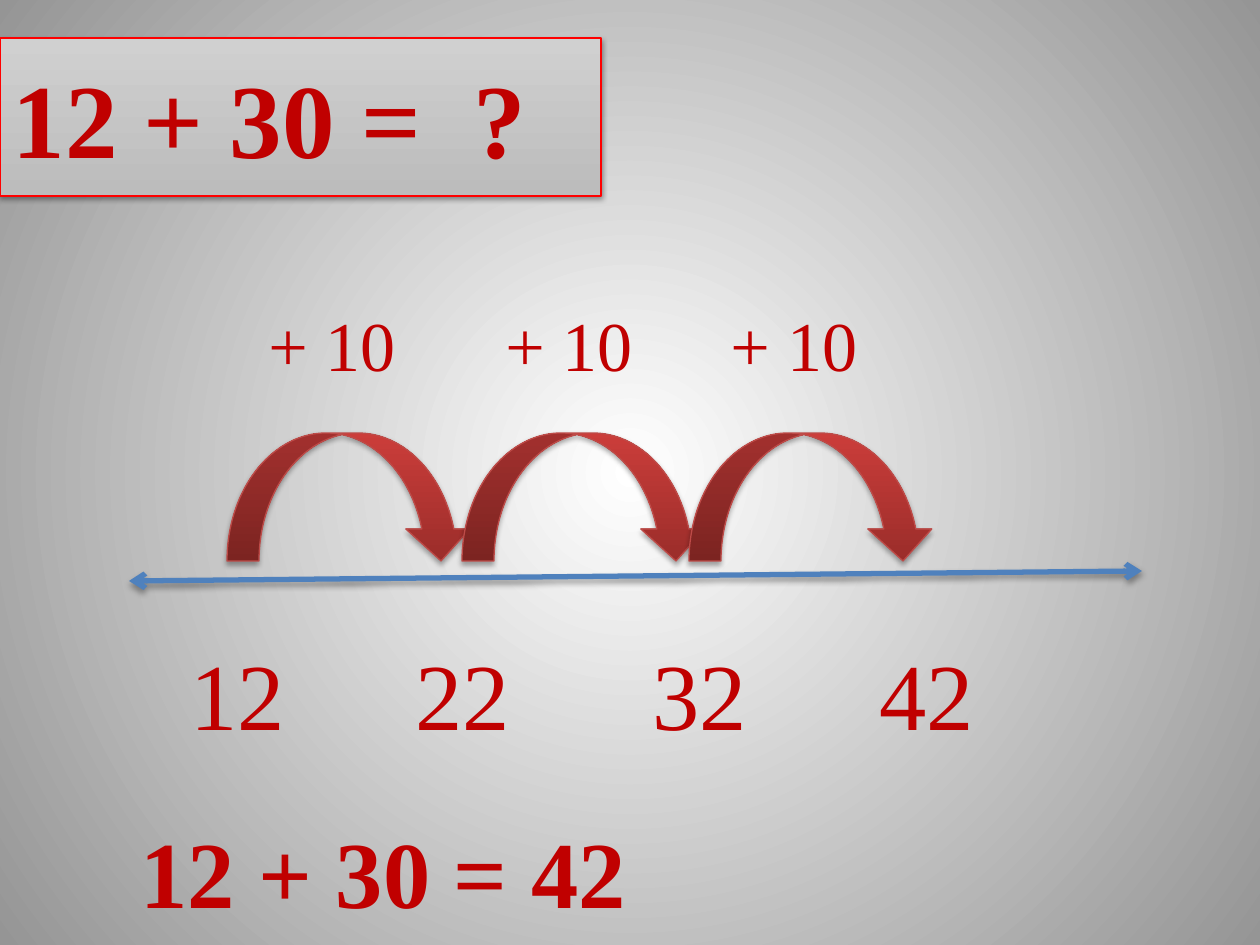
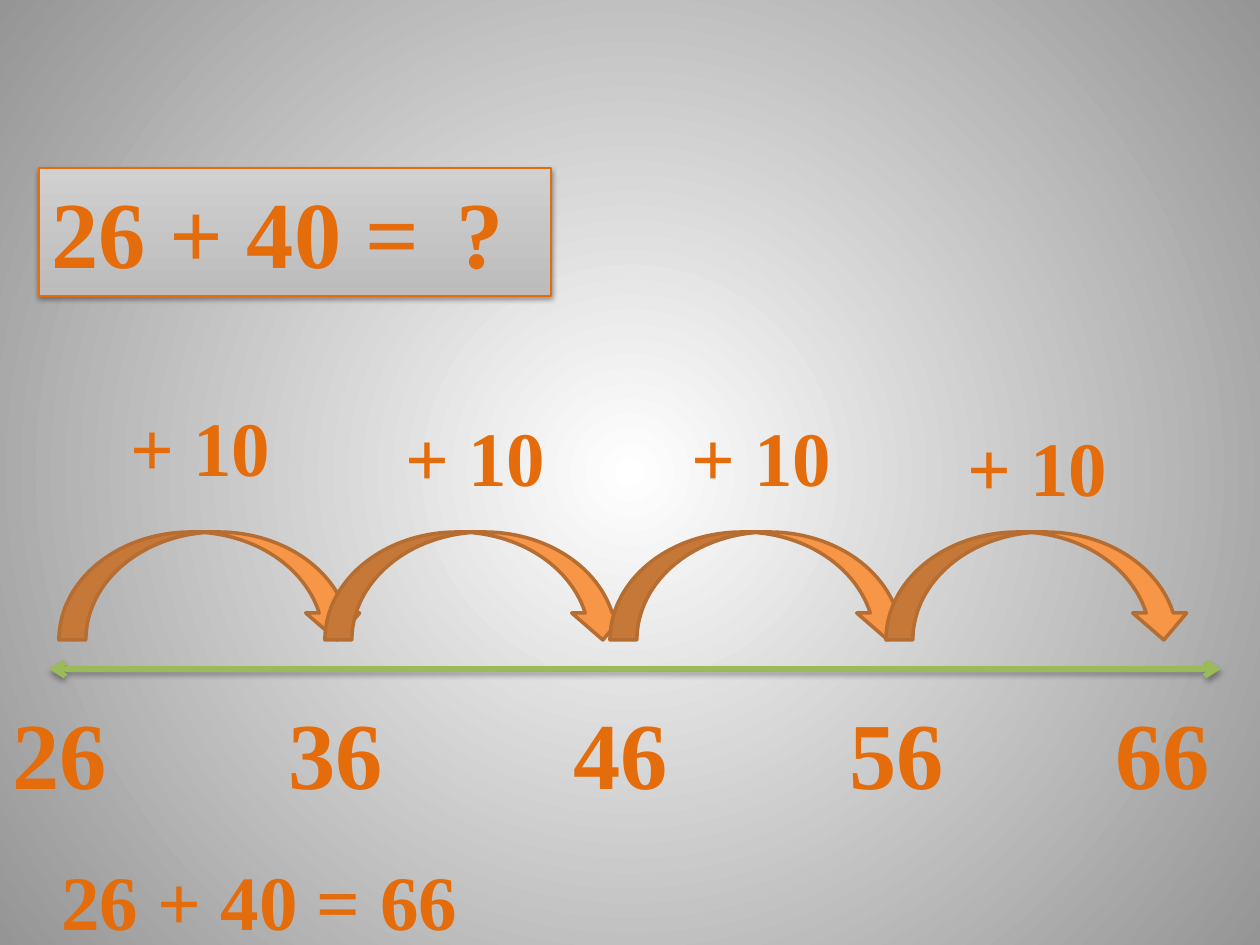
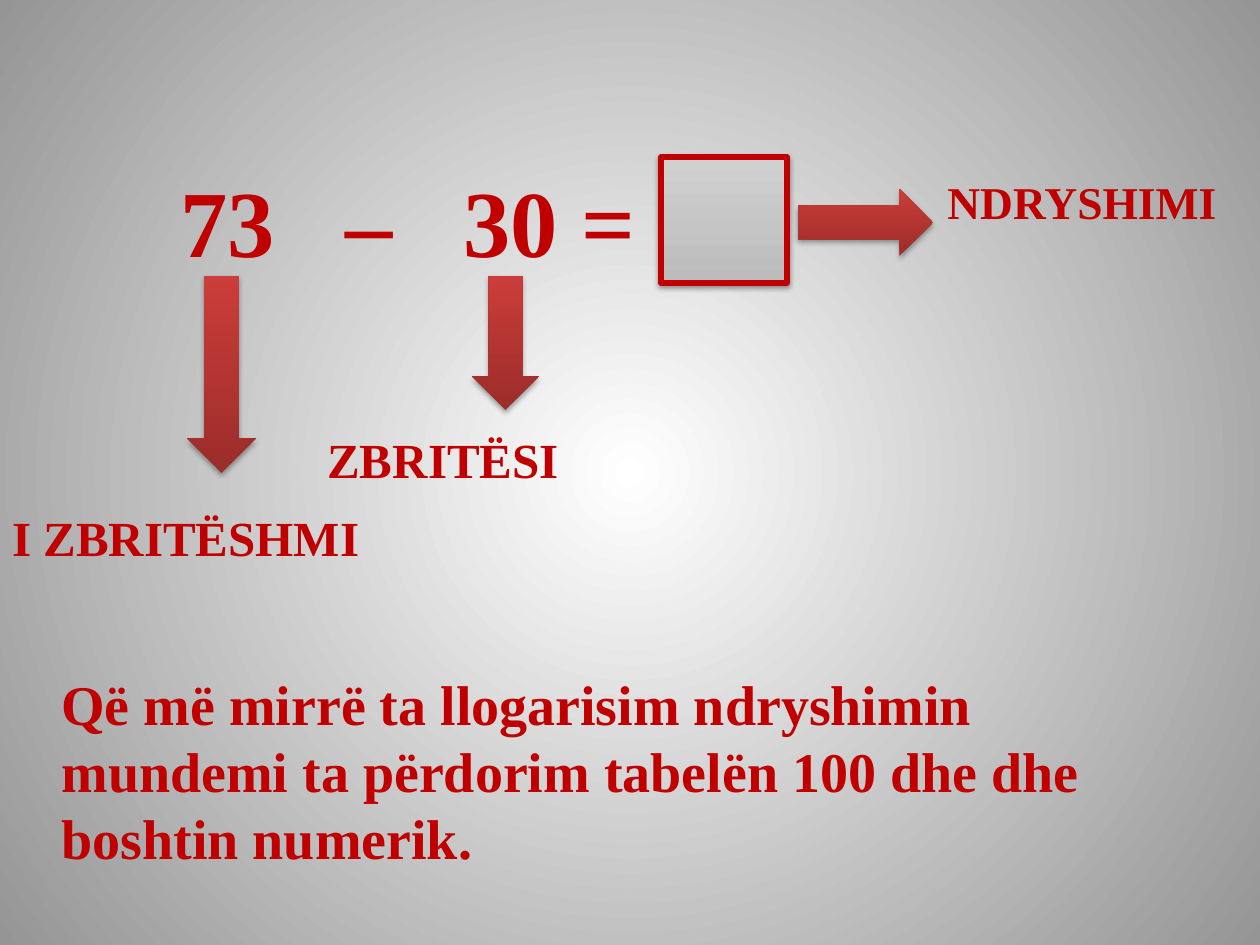
"""Build three slides that teach adding and subtracting tens."""
from lxml import etree
from pptx import Presentation
from pptx.dml.color import RGBColor
from pptx.enum.shapes import MSO_CONNECTOR, MSO_SHAPE
from pptx.enum.text import MSO_ANCHOR, MSO_AUTO_SIZE, PP_ALIGN
from pptx.oxml.ns import qn
from pptx.util import Inches, Pt

PX = 7257
FONT = "Times New Roman"
COLORS = {
    "red": "C00000", "orange": "E46C0A", "frame": "FF0000",
    "hop_line": "BE4B48", "hop_orange": "F79646", "hop_orange_line": "B66D31",
    "blue": "4F81BD", "green": "9BBB59", "shadow": "000000",
    "center": "FFFFFF", "edge": "959595",
    "panel_low": "BCBCBC", "panel_high": "D0D0D0",
    "arrow_low": "9B2D2A", "arrow_high": "CB3D3A",
}
PANEL = ("panel_low", "panel_high")
RED_ARROW = ("arrow_low", "arrow_high")
PANEL_SHADOW = (20000, 38000)
ARROW_SHADOW = (23000, 35000)
RECTANGLE = MSO_SHAPE.RECTANGLE
HOP = MSO_SHAPE.CURVED_DOWN_ARROW
DOWN_ARROW = MSO_SHAPE.DOWN_ARROW
RIGHT_ARROW = MSO_SHAPE.RIGHT_ARROW
STRAIGHT = MSO_CONNECTOR.STRAIGHT
TOP = MSO_ANCHOR.TOP
NO_FIT = MSO_AUTO_SIZE.NONE
GROW = MSO_AUTO_SIZE.SHAPE_TO_FIT_TEXT
JUSTIFY = PP_ALIGN.JUSTIFY


def write(shape, text, size, color, bold=True, wrap=True, tabs=()):
    """Put one styled paragraph into a shape."""
    frame = shape.text_frame
    frame.word_wrap = wrap
    frame.text = text
    paragraph = frame.paragraphs[0]
    if tabs:
        tab_list = etree.SubElement(paragraph._p.get_or_add_pPr(), qn("a:tabLst"))
        for position in tabs:
            etree.SubElement(tab_list, qn("a:tab"), pos=str(position * PX), algn="l")
    for run in paragraph.runs:
        run.font.name = FONT
        run.font.size = Pt(size)
        run.font.bold = bold
        run.font.color.rgb = RGBColor.from_string(COLORS[color])
    return frame


def finish(shape, fill=None, line=None, width=0.75, shadow=None):
    """Set the fill, line and shadow of a shape or connector."""
    if isinstance(fill, tuple):
        shape.fill.gradient()
        shape.fill.gradient_angle = 90
        for stop, name in zip(shape.fill.gradient_stops, fill):
            stop.color.rgb = RGBColor.from_string(COLORS[name])
    elif fill:
        shape.fill.solid()
        shape.fill.fore_color.rgb = RGBColor.from_string(COLORS[fill])
    if line:
        shape.line.color.rgb = RGBColor.from_string(COLORS[line])
        shape.line.width = Pt(width)
    else:
        shape.line.fill.background()
    effects = etree.SubElement(shape.element.spPr, qn("a:effectLst"))
    if shadow:
        distance, alpha = shadow
        outer = etree.SubElement(effects, qn("a:outerShdw"), blurRad="40000",
                                 dist=str(distance), dir="5400000", rotWithShape="0")
        shade = etree.SubElement(outer, qn("a:srgbClr"), val=COLORS["shadow"])
        etree.SubElement(shade, qn("a:alpha"), val=str(alpha))


presentation = Presentation()
presentation.slide_width = Inches(10)
presentation.slide_height = Inches(7.5)

master = presentation.slide_master
background = master.background.fill
background.gradient()
for stop, name in zip(background.gradient_stops, ("center", "edge")):
    stop.color.rgb = RGBColor.from_string(COLORS[name])
gradient = master.element.find(".//" + qn("a:gradFill"))
gradient.remove(gradient.find(qn("a:lin")))
circle = etree.SubElement(gradient, qn("a:path"), path="circle")
etree.SubElement(circle, qn("a:fillToRect"), l="50000", t="50000", r="50000", b="50000")

title_only = presentation.slide_layouts[5]
blank = presentation.slide_layouts[6]
red_slide = presentation.slides.add_slide(title_only)
orange_slide = presentation.slides.add_slide(blank)
terms_slide = presentation.slides.add_slide(blank)

title = red_slide.shapes.title
title.left, title.top, title.width, title.height = 0, 38 * PX, 601 * PX, 158 * PX
frame = write(title, "12 + 30 =\t?", 60, "red", tabs=(461,))
frame.auto_size = NO_FIT
frame.paragraphs[0].alignment = JUSTIFY
finish(title, PANEL, "frame", shadow=PANEL_SHADOW)

question = orange_slide.shapes.add_shape(RECTANGLE, 39 * PX, 168 * PX, 512 * PX, 128 * PX)
frame = write(question, "26 + 40 =", 54, "orange")
frame.vertical_anchor = TOP
frame.paragraphs[0].alignment = JUSTIFY
finish(question, PANEL, "orange", shadow=PANEL_SHADOW)
unknown = orange_slide.shapes.add_textbox(444 * PX, 168 * PX, 69 * PX, 127 * PX)
write(unknown, "?", 54, "orange")

number_lines = [
    {"slide": red_slide, "color": "red", "bold": False,
     "axis": (129, 581, 1142, 571), "axis_color": "blue",
     "start": 12, "number_lefts": (178, 403, 640, 867), "number_top": 630,
     "hop_lefts": (227, 462, 689), "hop_top": 433, "hop_size": (246, 128),
     "hop_style": (RED_ARROW, "hop_line", 0.75, ARROW_SHADOW),
     "labels": ((256, 295), (493, 295), (718, 295)), "label_size": (154, 97, 40),
     "answer": "12 + 30 = 42", "answer_box": (128, 808, 515, 127), "answer_size": 54},
    {"slide": orange_slide, "color": "orange", "bold": True,
     "axis": (49, 669, 1221, 669), "axis_color": "green",
     "start": 26, "number_lefts": (0, 276, 561, 837, 1103), "number_top": 689,
     "hop_lefts": (59, 325, 610, 886), "hop_top": 532, "hop_size": (305, 108),
     "hop_style": ("hop_orange", "hop_orange_line", 2, None),
     "labels": ((118, 393), (393, 403), (679, 403), (955, 413)),
     "label_size": (166, 106, 44),
     "answer": "26 + 40 = 66", "answer_box": (49, 847, 462, 106), "answer_size": 44},
]
for number_line in number_lines:
    shapes = number_line["slide"].shapes
    color, bold = number_line["color"], number_line["bold"]

    axis = shapes.add_connector(STRAIGHT, *(length * PX for length in number_line["axis"]))
    finish(axis, line=number_line["axis_color"], width=3, shadow=ARROW_SHADOW)
    for end in ("a:headEnd", "a:tailEnd"):
        etree.SubElement(axis.line._get_or_add_ln(), qn(end), type="arrow")

    for step, left in enumerate(number_line["number_lefts"]):
        number = shapes.add_textbox(left * PX, number_line["number_top"] * PX, 121 * PX, 127 * PX)
        value = number_line["start"] + 10 * step
        write(number, str(value), 54, color, bold, wrap=False).auto_size = GROW

    hop_width, hop_height = number_line["hop_size"]
    for left in number_line["hop_lefts"]:
        hop = shapes.add_shape(HOP, left * PX, number_line["hop_top"] * PX,
                               hop_width * PX, hop_height * PX)
        finish(hop, *number_line["hop_style"])

    label_width, label_height, label_points = number_line["label_size"]
    for left, top in number_line["labels"]:
        label = shapes.add_textbox(left * PX, top * PX, label_width * PX, label_height * PX)
        write(label, "+ 10", label_points, color, bold, wrap=False).auto_size = GROW

    answer = shapes.add_textbox(*(length * PX for length in number_line["answer_box"]))
    frame = write(answer, number_line["answer"], number_line["answer_size"], color, wrap=False)
    frame.auto_size = GROW

shapes = terms_slide.shapes
equation = shapes.add_textbox(168 * PX, 157 * PX, 493 * PX, 127 * PX)
write(equation, "73\t–\t30 =", 54, "red", tabs=(165, 283))
result = shapes.add_shape(RECTANGLE, 661 * PX, 157 * PX, 126 * PX, 126 * PX)
finish(result, PANEL, "red", 3, PANEL_SHADOW)

for kind, left, top, width, height in (
    (DOWN_ARROW, 187, 276, 69, 197),
    (DOWN_ARROW, 472, 276, 67, 134),
    (RIGHT_ARROW, 798, 189, 135, 67),
):
    arrow = shapes.add_shape(kind, left * PX, top * PX, width * PX, height * PX)
    finish(arrow, RED_ARROW, shadow=ARROW_SHADOW)

for text, size, left, top, width, height in (
    ("I ZBRITËSHMI", 28, 0, 501, 374, 72),
    ("ZBRITËSI", 28, 315, 423, 374, 72),
    ("NDRYSHIMI", 26, 935, 168, 325, 68),
    ("Që më mirrë ta llogarisim ndryshimin mundemi ta përdorim tabelën 100 "
     "dhe dhe boshtin numerik.", 32, 49, 663, 1123, 217),
):
    note = shapes.add_textbox(left * PX, top * PX, width * PX, height * PX)
    write(note, text, size, "red")

presentation.save("out.pptx")
